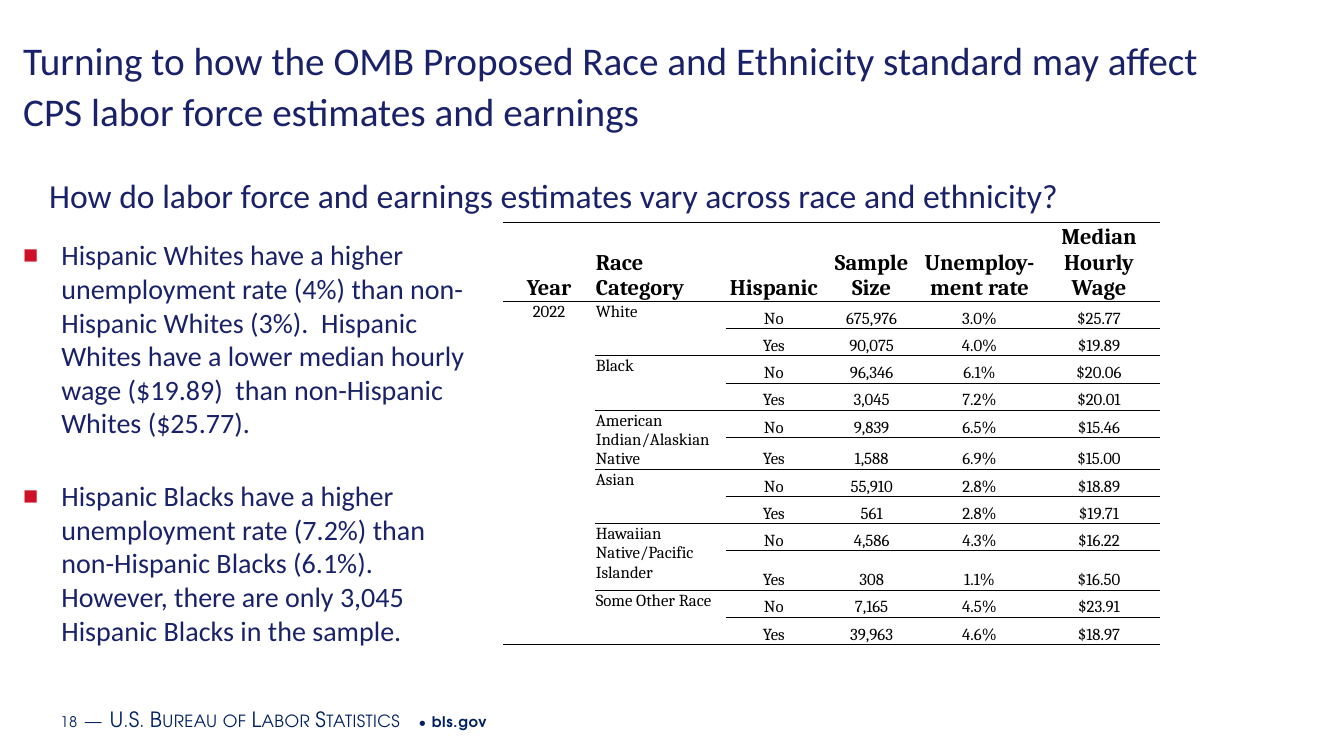
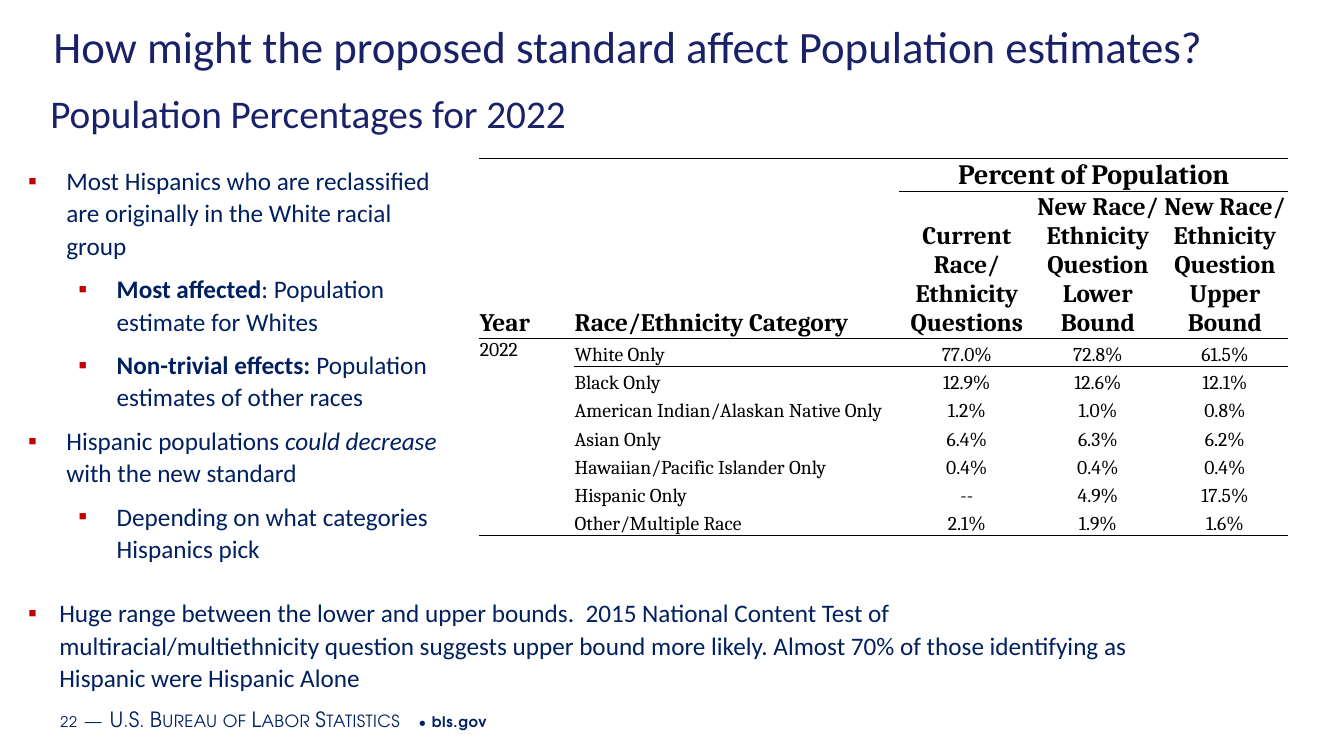
import dataclasses

import lxml.etree
import pptx
import pptx.dml.color
import pptx.enum.text
import pptx.oxml.ns
import pptx.util

Inches = pptx.util.Inches
Pt = pptx.util.Pt
Align = pptx.enum.text.PP_ALIGN
Anchor = pptx.enum.text.MSO_ANCHOR


@dataclasses.dataclass(frozen=True)
class Theme:
    indigo: str = "192168"
    navy: str = "002060"
    black: str = "000000"
    bright_red: str = "CE1126"
    dark_red: str = "C00000"
    body_font: str = "Calibri"
    table_font: str = "Cambria"
    footer_font: str = "TeX Gyre Adventor"
    size_title: float = 28
    size_large_title: float = 32
    size_question: float = 24
    size_body: float = 20
    size_detail: float = 18
    size_footer: float = 10.5
    size_agency: float = 15
    size_footer_gap: float = 16
    line_spacing: float = 1.07
    space_after: float = 8
    rule_width: float = 0.5


def assign(target, values):
    for name, value in values.items():
        setattr(target, name, value)


def add_element(parent, tag, **attributes):
    return lxml.etree.SubElement(parent, pptx.oxml.ns.qn(tag), attributes)


class Deck:
    """Hold the theme and the current slide, and draw each kind of element."""

    def __init__(self, theme):
        self.theme = theme
        self.presentation = pptx.Presentation()
        assign(self.presentation, {"slide_width": Inches(13.33), "slide_height": Inches(7.5)})
        self.loose = {"line_spacing": theme.line_spacing, "space_after": Pt(theme.space_after)}

    def add_slide(self, number):
        self.slide = self.presentation.slides.add_slide(self.presentation.slide_layouts[5])
        self.add_footer(number)

    def format_font(self, font, color, **values):
        assign(font, values)
        font.color.rgb = pptx.dml.color.RGBColor.from_string(color)

    def add_run(self, paragraph, text, color, **values):
        run = paragraph.add_run()
        run.text = text
        self.format_font(run.font, color, **values)
        return run

    def place(self, shape, box):
        assign(shape, dict(zip(("left", "top", "width", "height"), map(Inches, box))))
        frame = shape.text_frame
        assign(frame, {"word_wrap": True, "vertical_anchor": Anchor.TOP,
                       "auto_size": pptx.enum.text.MSO_AUTO_SIZE.NONE})
        return frame

    def add_text_frame(self, box):
        return self.place(self.slide.shapes.add_textbox(0, 0, 0, 0), box)

    def write_heading(self, frame, text, size):
        paragraph = frame.paragraphs[0]
        assign(paragraph, {"alignment": Align.LEFT, **self.loose})
        self.add_run(paragraph, text, self.theme.indigo, name=self.theme.body_font, size=Pt(size))

    def add_title(self, text, box, size):
        self.write_heading(self.place(self.slide.shapes.title, box), text, size)

    def add_subtitle(self, text, box, size):
        self.write_heading(self.add_text_frame(box), text, size)

    def add_footer(self, number):
        theme = self.theme
        frame = self.add_text_frame((0.53, 6.93, 8.47, 0.4))
        assign(frame, {"vertical_anchor": Anchor.MIDDLE,
                       "margin_left": Inches(0.07), "margin_right": Inches(0.07),
                       "margin_top": Inches(0.04), "margin_bottom": Inches(0.04)})
        parts = [
            (str(number), theme.size_footer, False),
            (" ", theme.size_footer_gap, False),
            ("—", theme.size_agency, False),
            (" ", theme.size_footer_gap, False),
            ("U.S. Bureau of Labor Statistics", theme.size_agency, False),
            (" • ", theme.size_footer, False),
            ("bls.gov", theme.size_footer, True),
        ]
        for text, size, bold in parts:
            run = self.add_run(frame.paragraphs[0], text, theme.navy,
                               name=theme.footer_font, size=Pt(size), bold=bold)
            properties = run._r.get_or_add_rPr()
            small_caps = size == theme.size_agency
            properties.set("spc", "30" if small_caps else "50")
            if small_caps:
                properties.set("cap", "small")

    def add_bullets(self, box, items, color, size, symbol, symbol_color,
                    symbol_percent=100, indent=0.38, spacing=None):
        frame = self.add_text_frame(box)
        for index, (level, runs) in enumerate(items):
            paragraph = frame.add_paragraph() if index else frame.paragraphs[0]
            properties = paragraph._p.get_or_add_pPr()
            properties.set("marL", str(Inches(indent + 0.5 * level)))
            properties.set("indent", str(-Inches(indent)))
            add_element(add_element(properties, "a:buClr"), "a:srgbClr", val=symbol_color)
            add_element(properties, "a:buSzPct", val=str(symbol_percent * 1000))
            add_element(properties, "a:buFont", typeface="Arial")
            add_element(properties, "a:buChar", char=symbol)
            paragraph.level = level
            assign(paragraph, self.loose if spacing is None else {})
            if spacing and index:
                paragraph.space_before = Pt(spacing)
            for text, values in runs:
                self.add_run(paragraph, text, color, name=self.theme.body_font,
                             size=Pt(size), **values)

    def add_rule(self, cell, tag):
        line = add_element(cell._tc.get_or_add_tcPr(), tag, w=str(Pt(self.theme.rule_width)))
        add_element(add_element(line, "a:solidFill"), "a:srgbClr", val=self.theme.black)

    def add_table(self, corner, widths, heights, rows, merges, rules, header_sizes,
                  body_size, left_columns, top_columns):
        left, top = map(Inches, corner)
        table = self.slide.shapes.add_table(len(rows), len(widths), left, top,
                                            Inches(sum(widths)), Inches(sum(heights))).table
        assign(table, {"first_row": False, "horz_banding": False})
        for column, width in zip(table.columns, widths):
            column.width = Inches(width)
        for row, height in zip(table.rows, heights):
            row.height = Inches(height)
        for first, last in merges:
            table.cell(*first).merge(table.cell(*last))
        for row, texts in enumerate(rows):
            header = row < len(header_sizes)
            size = header_sizes[row] if header else body_size
            for column, text in enumerate(texts):
                cell = table.cell(row, column)
                at_top = not header and column in top_columns
                assign(cell, {"text": text,
                              "vertical_anchor": Anchor.TOP if at_top else Anchor.BOTTOM,
                              "margin_left": Inches(0.01), "margin_right": Inches(0.01),
                              "margin_top": Inches(0.01), "margin_bottom": 0})
                for paragraph in cell.text_frame.paragraphs:
                    paragraph.alignment = Align.LEFT if column in left_columns else Align.CENTER
                    for run in paragraph.runs:
                        self.format_font(run.font, self.theme.black, name=self.theme.table_font,
                                         size=Pt(size), bold=header)
                span = cell.span_height if cell.is_merge_origin else 1
                for tag, edge in (("a:lnT", row), ("a:lnB", row + span)):
                    if column >= rules.get(edge, len(widths)):
                        self.add_rule(cell, tag)
                cell.fill.background()
        style = table._tbl.tblPr.find(pptx.oxml.ns.qn("a:tableStyleId"))
        style.text = "{2D5ABB26-0587-4C30-8999-92F81FD0307C}"


def build_earnings_slide(deck):
    theme = deck.theme
    deck.add_slide(18)
    deck.add_title("Turning to how the OMB Proposed Race and Ethnicity standard may affect "
                   "CPS labor force estimates and earnings", (0.13, 0.28, 12.25, 1.2),
                   theme.size_title)
    deck.add_subtitle("How do labor force and earnings estimates vary across race and ethnicity?",
                      (0.39, 1.66, 12, 0.5), theme.size_question)
    estimates = [
        ("White", ("675,976", "3.0%", "$25.77"), ("90,075", "4.0%", "$19.89")),
        ("Black", ("96,346", "6.1%", "$20.06"), ("3,045", "7.2%", "$20.01")),
        ("American Indian/Alaskian Native",
         ("9,839", "6.5%", "$15.46"), ("1,588", "6.9%", "$15.00")),
        ("Asian", ("55,910", "2.8%", "$18.89"), ("561", "2.8%", "$19.71")),
        ("Hawaiian Native/Pacific Islander",
         ("4,586", "4.3%", "$16.22"), ("308", "1.1%", "$16.50")),
        ("Some Other Race", ("7,165", "4.5%", "$23.91"), ("39,963", "4.6%", "$18.97")),
    ]
    rows = [("Year", "Race Category", "Hispanic", "Sample Size", "Unemploy-ment rate",
             "Median Hourly Wage")]
    for race, not_hispanic, hispanic in estimates:
        rows.append(("" if len(rows) > 1 else "2022", race, "No", *not_hispanic))
        rows.append(("", "", "Yes", *hispanic))
    group_starts = range(1, len(rows), 2)
    heights = [0.78] + [0.27] * 12
    heights[10] = 0.39
    deck.add_table(
        (4.99, 2.21), [0.91, 1.3, 0.95, 0.99, 1.15, 1.22], heights, rows,
        merges=[((1, 0), (12, 0))] + [((row, 1), (row + 1, 1)) for row in group_starts],
        rules={**{row: 1 for row in group_starts}, 0: 0, 1: 0, 13: 0},
        header_sizes=[16], body_size=12, left_columns={1}, top_columns={0, 1})
    deck.add_bullets((0.13, 2.31, 4.62, 4.68), [
        (0, [("Hispanic Whites have a higher unemployment rate (4%) than non-Hispanic Whites "
              "(3%).  Hispanic Whites have a lower median hourly wage ($19.89)  than "
              "non-Hispanic Whites ($25.77).", {})]),
        (0, [("Hispanic Blacks have a higher unemployment rate (7.2%) than non-Hispanic Blacks "
              "(6.1%).  However, there are only 3,045 Hispanic Blacks in the sample.", {})]),
    ], theme.indigo, theme.size_body, "■", theme.bright_red, symbol_percent=90, spacing=28)


def build_population_slide(deck):
    theme = deck.theme
    deck.add_slide(22)
    deck.add_title("How might the proposed standard affect Population estimates?",
                   (0.43, 0.1, 12.47, 0.7), theme.size_large_title)
    deck.add_subtitle("Population Percentages for 2022", (0.4, 0.8, 12.25, 0.7),
                      theme.size_title)
    rows = [
        ("", "", "Percent of Population", "", ""),
        ("Year", "Race/Ethnicity Category", "Current Race/ Ethnicity Questions",
         "New Race/ Ethnicity Question\nLower Bound",
         "New Race/ Ethnicity Question\nUpper Bound"),
        ("2022", "White Only", "77.0%", "72.8%", "61.5%"),
        ("", "Black Only", "12.9%", "12.6%", "12.1%"),
        ("", "American Indian/Alaskan Native Only", "1.2%", "1.0%", "0.8%"),
        ("", "Asian Only", "6.4%", "6.3%", "6.2%"),
        ("", "Hawaiian/Pacific Islander Only", "0.4%", "0.4%", "0.4%"),
        ("", "Hispanic Only", "--", "4.9%", "17.5%"),
        ("", "Other/Multiple Race", "2.1%", "1.9%", "1.6%"),
    ]
    deck.add_table(
        (4.75, 1.57), [0.94, 3.23, 1.34, 1.26, 1.26], [0.29, 1.33] + [0.28] * 7, rows,
        merges=[((0, 0), (0, 1)), ((0, 2), (0, 4)), ((2, 0), (8, 0))],
        rules={0: 0, 1: 2, 2: 0, 9: 0}, header_sizes=[20, 18], body_size=14,
        left_columns={0, 1}, top_columns={0})
    style = (theme.navy, theme.size_detail, "▪", theme.dark_red)
    deck.add_bullets((0.18, 1.57, 4.4, 4.1), [
        (0, [("Most Hispanics who are reclassified are originally in the White racial group", {})]),
        (1, [("Most affected", {"bold": True}), (": Population estimate for Whites", {})]),
        (1, [("Non-trivial effects: ", {"bold": True}),
             ("Population estimates of other races", {})]),
        (0, [("Hispanic populations ", {}), ("could decrease ", {"italic": True}),
             ("with the new standard", {})]),
        (1, [("Depending on what categories Hispanics pick", {})]),
    ], *style)
    deck.add_bullets((0.18, 5.86, 11.32, 1.06), [
        (0, [("Huge range between the lower and upper bounds.  2015 National Content Test of "
              "multiracial/multiethnicity question suggests upper bound more likely. Almost 70% "
              "of those identifying as Hispanic were Hispanic Alone", {})]),
    ], *style, indent=0.31)


def main():
    deck = Deck(Theme())
    build_earnings_slide(deck)
    build_population_slide(deck)
    deck.presentation.save("out.pptx")


if __name__ == "__main__":
    main()
